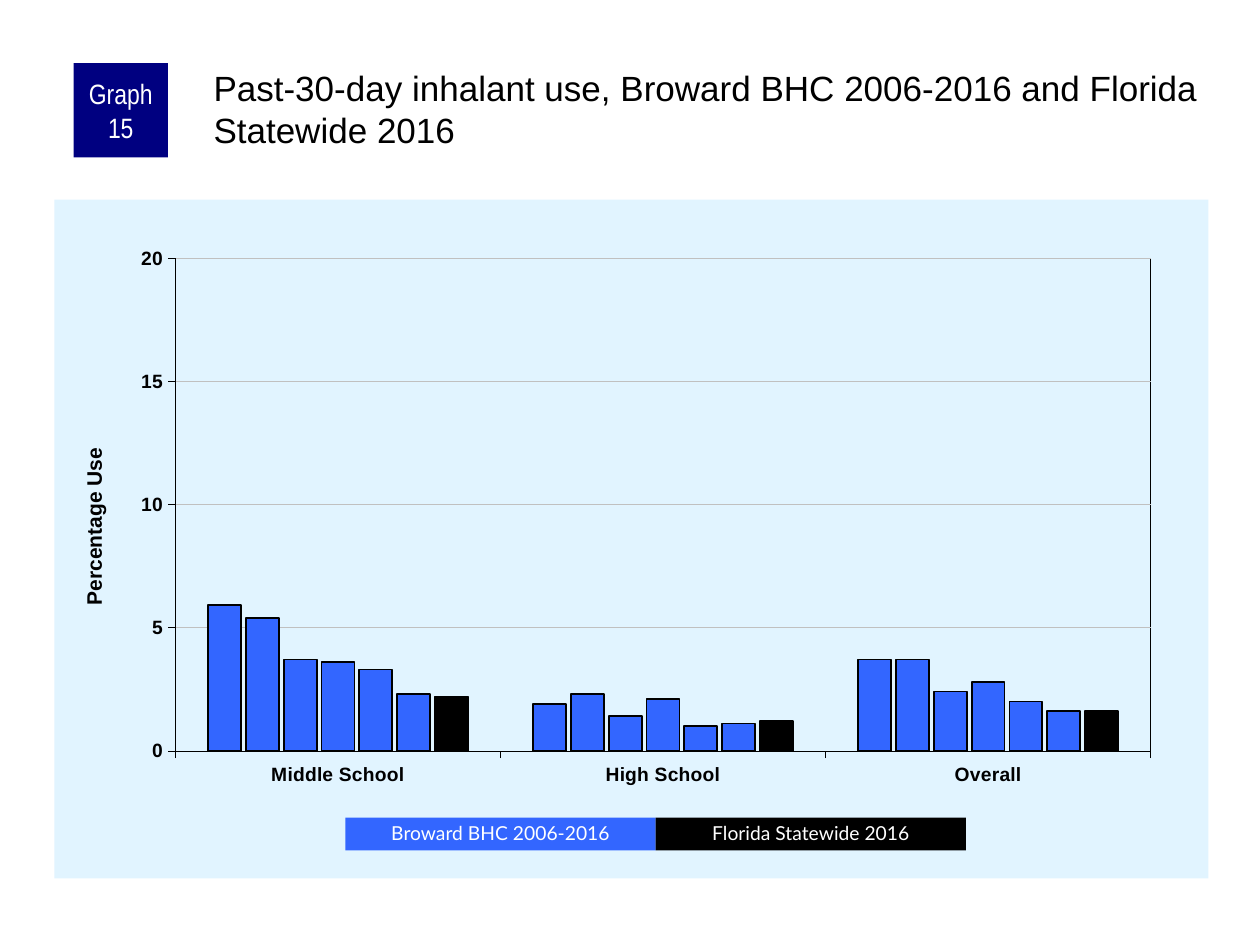
"""Build the slide on past-30-day inhalant use with a clustered column chart."""
from lxml import etree
from pptx import Presentation
from pptx.chart.data import CategoryChartData
from pptx.dml.color import RGBColor
from pptx.enum.chart import XL_CHART_TYPE, XL_TICK_MARK
from pptx.enum.shapes import MSO_SHAPE
from pptx.enum.text import MSO_ANCHOR, MSO_AUTO_SIZE, PP_ALIGN
from pptx.util import Pt

COLUMNS = XL_CHART_TYPE.COLUMN_CLUSTERED
OUTSIDE, NO_TICK = XL_TICK_MARK.OUTSIDE, XL_TICK_MARK.NONE
RECT = MSO_SHAPE.RECTANGLE
TOP, MIDDLE = MSO_ANCHOR.TOP, MSO_ANCHOR.MIDDLE
LEFT, CENTER = PP_ALIGN.LEFT, PP_ALIGN.CENTER
BLACK = RGBColor(0x00, 0x00, 0x00)
WHITE = RGBColor(0xFF, 0xFF, 0xFF)
NAVY = RGBColor(0x00, 0x00, 0x80)
BLUE = RGBColor(0x33, 0x66, 0xFF)
PALE_BLUE = RGBColor(0xE1, 0xF4, 0xFF)
GREY = RGBColor(0xC0, 0xC0, 0xC0)
NS = ('xmlns:c="http://schemas.openxmlformats.org/drawingml/2006/chart" '
      'xmlns:a="http://schemas.openxmlformats.org/drawingml/2006/main"')


def style_font(font, size, color, name="Arial", bold=False):
    font.size, font.name, font.bold = Pt(size), name, bold
    font.color.rgb = color


def add_label(box, fill, text, size, name):
    s = slide.shapes.add_shape(RECT, *[Pt(v) for v in box])
    s.shadow.inherit = False
    s.fill.solid()
    s.fill.fore_color.rgb = fill
    s.line.fill.background()
    tf = s.text_frame
    tf.word_wrap = True
    tf.vertical_anchor = MIDDLE
    p = tf.paragraphs[0]
    p.alignment = CENTER
    r = p.add_run()
    r.text = text
    style_font(r.font, size, WHITE, name)
    return tf


prs = Presentation()
prs.slide_width, prs.slide_height = Pt(720), Pt(540)
slide = prs.slides.add_slide(prs.slide_layouts[5])

data = CategoryChartData()
data.categories = ["Middle School", "High School", "Overall"]
SERIES = [
    (5.9, 1.9, 3.7),
    (5.4, 2.3, 3.7),
    (3.7, 1.4, 2.4),
    (3.6, 2.1, 2.8),
    (3.3, 1, 2),
    (2.3, 1.1, 1.6),
    (2.2, 1.2, 1.6),
]
for i, values in enumerate(SERIES, 1):
    data.add_series(f"Series {i}", values)
chart = slide.shapes.add_chart(
    COLUMNS, Pt(31), Pt(114), Pt(659.5), Pt(388), data).chart
chart.has_legend = False
chart.has_title = False
style_font(chart.font, 8, BLACK)

plot = chart.plots[0]
plot.gap_width, plot.overlap = 200, -15
plot.vary_by_categories = False
for i, series in enumerate(plot.series, 1):
    series.format.fill.solid()
    series.format.fill.fore_color.rgb = BLACK if i == len(SERIES) else BLUE
    series.format.line.color.rgb = BLACK
    series.format.line.width = Pt(1)

for axis in (chart.category_axis, chart.value_axis):
    axis.major_tick_mark, axis.minor_tick_mark = OUTSIDE, NO_TICK
    axis.format.line.color.rgb = BLACK
    axis.format.line.width = Pt(0.25)
    style_font(axis.tick_labels.font, 11, BLACK, bold=True)
axis = chart.value_axis
axis.minimum_scale, axis.maximum_scale, axis.major_unit = 0, 20, 5
axis.has_major_gridlines = True
axis.major_gridlines.format.line.color.rgb = GREY
axis.major_gridlines.format.line.width = Pt(0.25)
r = axis.axis_title.text_frame.paragraphs[0].add_run()
r.text = "Percentage Use"
style_font(r.font, 12, BLACK, bold=True)

LAYOUT = ('<c:layout {ns}><c:manualLayout>{target}<c:xMode val="edge"/>'
          '<c:yMode val="edge"/><c:x val="{x}"/><c:y val="{y}"/>{size}'
          '</c:manualLayout></c:layout>')
title_layout = LAYOUT.format(ns=NS, target="", x=0.02, y=0.36, size="")
plot_layout = LAYOUT.format(
    ns=NS, target='<c:layoutTarget val="inner"/>', x=0.105, y=0.086,
    size='<c:w val="0.845"/><c:h val="0.726"/>')
space = chart.element
area = space.chart.plotArea
for old in area.xpath("c:layout") + area.xpath("c:valAx/c:title/c:layout"):
    old.getparent().remove(old)
area.insert(0, etree.fromstring(plot_layout))
area.xpath("c:valAx/c:title/c:tx")[0].addnext(etree.fromstring(title_layout))
area.append(etree.fromstring(
    f'<c:spPr {NS}><a:noFill/><a:ln w="3175"><a:solidFill>'
    f'<a:srgbClr val="{BLACK}"/></a:solidFill></a:ln></c:spPr>'))
space.chart.addnext(etree.fromstring(
    f'<c:spPr {NS}><a:solidFill><a:srgbClr val="{PALE_BLUE}"/></a:solidFill>'
    f'<a:ln><a:noFill/></a:ln></c:spPr>'))

tf = add_label((42, 36, 54, 54), NAVY, "Graph 15", 16, "Arial Narrow")
tf.margin_left = tf.margin_right = Pt(3.6)
tf.margin_top = tf.margin_bottom = 0

title = slide.shapes.title
title.left, title.top, title.width, title.height = Pt(120), Pt(36), Pt(570), Pt(60)
tf = title.text_frame
tf.word_wrap = True
tf.auto_size = MSO_AUTO_SIZE.NONE
tf.vertical_anchor = TOP
tf.margin_left = tf.margin_top = Pt(2)
tf.margin_right = tf.margin_bottom = 0
p = tf.paragraphs[0]
p.alignment = LEFT
r = p.add_run()
r.text = "Past-30-day inhalant use, Broward BHC 2006-2016 and Florida Statewide 2016"
style_font(r.font, 20, BLACK)

KEYS = [("Broward BHC 2006-2016", BLUE), ("Florida Statewide 2016", BLACK)]
KEY_WIDTH = 177.3
for i, (text, fill) in enumerate(KEYS):
    box = (197.4 + i * KEY_WIDTH, 467.2, KEY_WIDTH, 18.8)
    tf = add_label(box, fill, text, 11, "Lato")
    tf.paragraphs[0].line_spacing = 0.9

prs.save("out.pptx")
